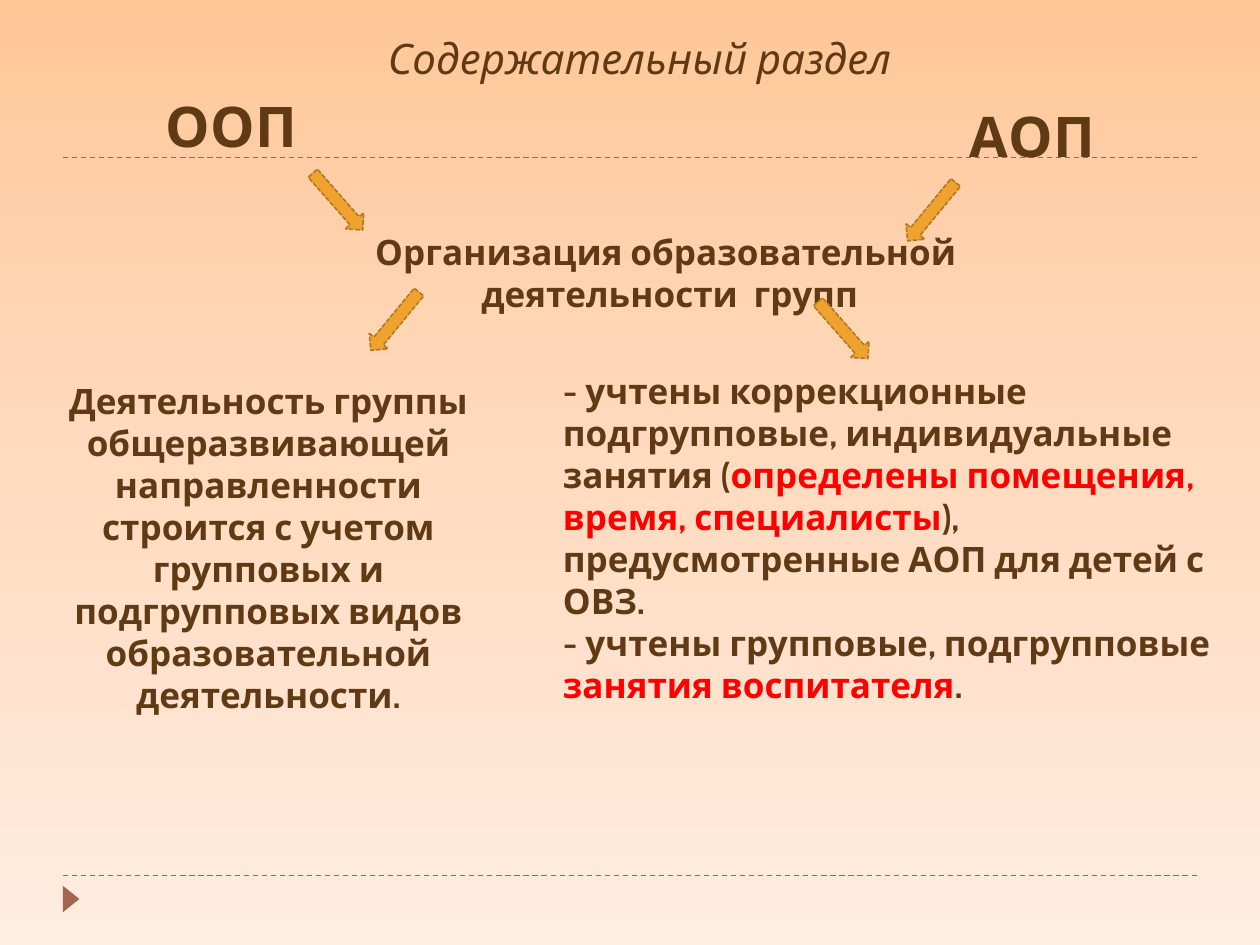
from collections import namedtuple
from copy import deepcopy
from dataclasses import dataclass

from pptx import Presentation
from pptx.dml.color import RGBColor
from pptx.enum.dml import MSO_LINE
from pptx.enum.shapes import MSO_CONNECTOR, MSO_SHAPE
from pptx.enum.text import PP_ALIGN
from pptx.oxml.ns import qn
from pptx.util import Pt

STRAIGHT = MSO_CONNECTOR.STRAIGHT
DOWN_ARROW = MSO_SHAPE.DOWN_ARROW
TRIANGLE = MSO_SHAPE.ISOSCELES_TRIANGLE
DASH, SHORT_DASH = MSO_LINE.DASH, MSO_LINE.SQUARE_DOT
LEFT, CENTER = PP_ALIGN.LEFT, PP_ALIGN.CENTER

Box = namedtuple("Box", "left top width height")


def color(code):
    return RGBColor.from_string(code)


@dataclass(frozen=True)
class Theme:
    font: str = "Cabin"
    heading: int = 32
    title: int = 24
    body: int = 20
    ink: RGBColor = color("603A14")
    accent: RGBColor = color("FF0000")
    rule: RGBColor = color("A5644E")
    arrow: RGBColor = color("F0A22E")
    arrow_edge: RGBColor = color("B27822")
    sky: tuple = (color("FFC798"), color("FFDBC0"), color("FFEDE0"))


THEME = Theme()


def add_text(page, box, paragraphs, size, align=LEFT, bold=True, italic=False):
    frame = page.shapes.add_textbox(*map(Pt, box)).text_frame
    frame.word_wrap = True
    for index, spans in enumerate(paragraphs):
        para = frame.add_paragraph() if index else frame.paragraphs[0]
        para.alignment = align
        for words, ink in spans:
            span = para.add_run()
            span.text = words
            font = span.font
            font.name, font.size = THEME.font, Pt(size)
            font.bold, font.italic = bold, italic
            font.color.rgb = ink


def add_solid(page, kind, box, fill, rotation):
    shape = page.shapes.add_shape(kind, *map(Pt, box))
    shape.shadow.inherit = False
    shape.rotation = rotation
    shape.fill.solid()
    shape.fill.fore_color.rgb = fill
    shape.line.fill.background()
    return shape


def add_rule(page, left, right, y):
    rule = page.shapes.add_connector(STRAIGHT, Pt(left), Pt(y), Pt(right), Pt(y))
    rule.line.color.rgb = THEME.rule
    rule.line.width = Pt(0.75)
    rule.line.dash_style = DASH
    properties = rule._element.spPr
    properties.append(properties.makeelement(qn("a:effectLst"), {}))


def add_arrow(page, center_x, center_y, rotation):
    width, height = 14, 43.2
    box = Box(center_x - width / 2, center_y - height / 2, width, height)
    arrow = add_solid(page, DOWN_ARROW, box, THEME.arrow, rotation)
    arrow.line.color.rgb = THEME.arrow_edge
    arrow.line.width = Pt(0.9)
    arrow.line.dash_style = SHORT_DASH


def paint_background(page):
    fill = page.background.fill
    fill.gradient()
    fill.gradient_angle = 270
    first = next(page.element.iter(qn("a:gs")))
    first.addnext(deepcopy(first))
    for index, (stop, shade) in enumerate(zip(fill.gradient_stops, THEME.sky)):
        stop.position = index / 2
        stop.color.rgb = shade


def frame_page(page, box):
    right, bottom = box.left + box.width, box.top + box.height
    for y in (bottom, box.top):
        add_rule(page, box.left, right, y)
    marker = Box(box.left - 2.9, bottom + 8.6, 15.1, 9.4)
    add_solid(page, TRIANGLE, marker, THEME.rule, 90)


def add_header(page, box):
    headings = (("АОП", 334.8, 39.6, 113), ("ООП", -124.6, 33.8, 96.5))
    for words, dx, dy, width in headings:
        place = Box(box.left + dx, box.top + dy, width, 46)
        add_text(page, place, [[(words, THEME.ink)]], THEME.heading)
    add_text(page, box, [[("Содержательный раздел ", THEME.ink)]],
             THEME.title, CENTER, bold=False, italic=True)


def add_comparison(page, box):
    ink, accent = THEME.ink, THEME.accent
    adapted = [
        [("- учтены коррекционные подгрупповые, индивидуальные занятия (", ink),
         ("определены помещения, время, специалисты", accent),
         ("), предусмотренные АОП для детей с ОВЗ.", ink)],
        [("- учтены групповые, подгрупповые ", ink),
         ("занятия воспитателя", accent), (".", ink)],
    ]
    general = [[("Деятельность группы общеразвивающей направленности строится "
                 "с учетом групповых и подгрупповых видов образовательной "
                 "деятельности.", ink)]]
    left_column = Box(box.left, box.top + 5.7, 266.4, 177)
    right_column = Box(box.left + box.width - 391, box.top, 391, 152.6)
    add_text(page, right_column, adapted, THEME.body)
    add_text(page, left_column, general, THEME.body, CENTER)


def add_topic(page, box):
    topic = "Организация образовательной  деятельности  групп"
    add_text(page, box, [[(topic, THEME.ink)]], THEME.body, CENTER)
    to_left, to_right = 39.5, 318.7
    arrows = ((92.5, 55.4, to_left), (348.5, 60.5, to_right),
              (399.2, -7.2, to_left), (59.8, -13, to_right))
    for dx, dy, rotation in arrows:
        add_arrow(page, box.left + dx, box.top + dy, rotation)


def main():
    deck = Presentation()
    deck.slide_width, deck.slide_height = Pt(720), Pt(540)
    page = deck.slides.add_slide(deck.slide_layouts[6])
    paint_background(page)
    frame_page(page, Box(36, 90, 648, 410.4))
    add_header(page, Box(212.4, 15.1, 311.8, 36))
    add_comparison(page, Box(20.2, 207.4, 685.4, 182.7))
    add_topic(page, Box(133.2, 128.2, 499, 31.7))
    deck.save("out.pptx")


if __name__ == "__main__":
    main()
